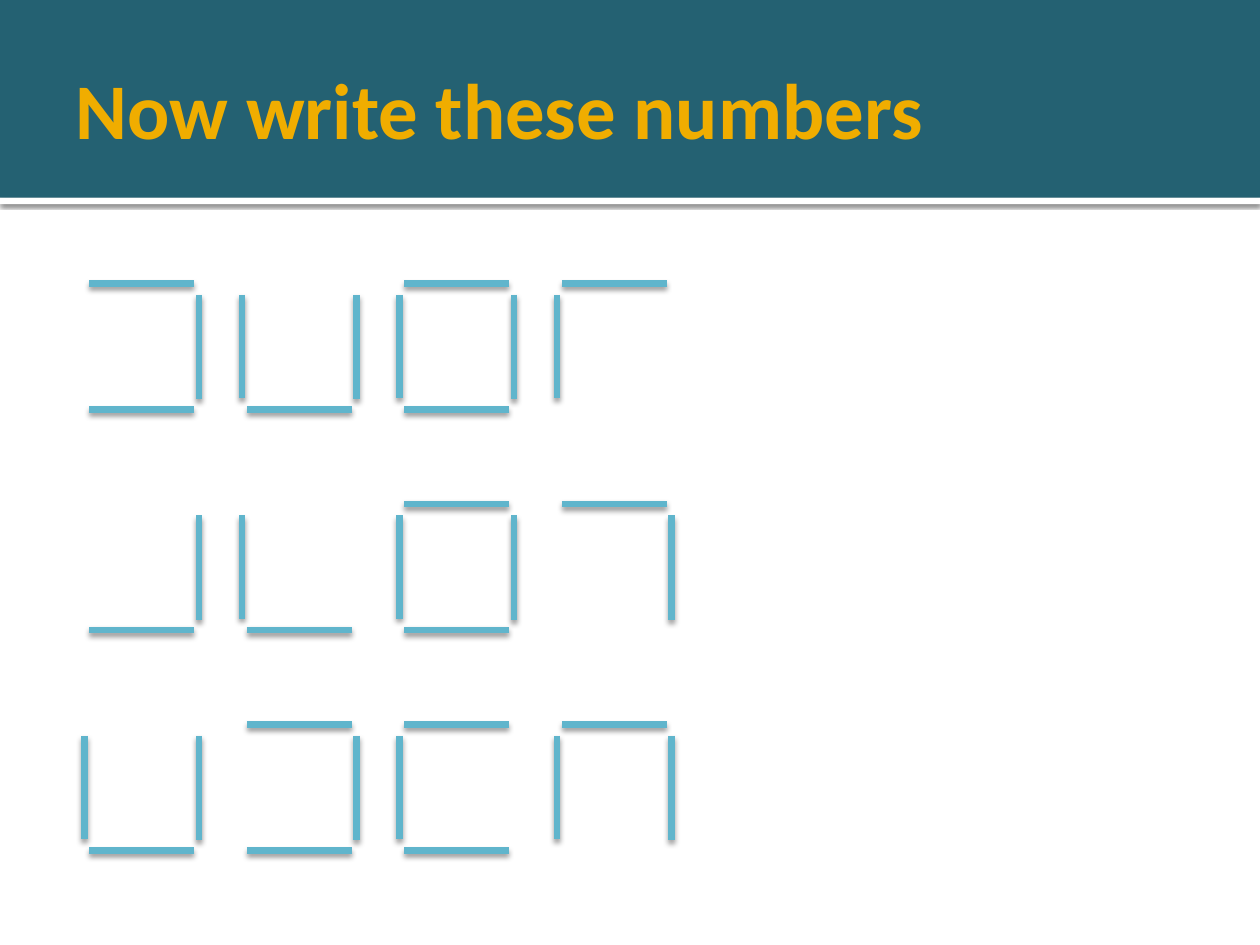
from dataclasses import dataclass

from lxml.etree import SubElement
from pptx import Presentation
from pptx.dml.color import RGBColor
from pptx.enum.shapes import MSO_CONNECTOR, MSO_SHAPE
from pptx.enum.text import MSO_ANCHOR, PP_ALIGN
from pptx.oxml.ns import qn
from pptx.util import Inches, Pt

TEAL = RGBColor(0x24, 0x61, 0x72)
WHITE = RGBColor(0xFF, 0xFF, 0xFF)
AMBER = RGBColor(0xF0, 0xAD, 0x00)
SKY = RGBColor(0x60, 0xB5, 0xCC)


@dataclass(frozen=True)
class Shadow:
    opacity: int  # percent
    blur: float  # points
    distance: float  # points


@dataclass(frozen=True)
class Stroke:
    x1: float
    y1: float
    x2: float
    y2: float


BAND_SHADOW = Shadow(60, 2.5, 0.8)
STROKE_SHADOW = Shadow(38, 3.1, 2)

# Strokes of one digit, measured from the corner of its cell
STROKES = {
    "top": Stroke(0.04, 0, 0.87, 0),
    "bottom": Stroke(0.04, 1, 0.87, 1),
    "left": Stroke(0, 0.09, 0, 0.91),
    "right": Stroke(0.91, 0.09, 0.91, 0.92),
}

# Each digit is a box with some sides left out, as in a 3 x 3 grid
DIGITS = {
    1: "bottom right",
    2: "left bottom right",
    3: "left bottom",
    4: "top bottom right",
    5: "top bottom left right",
    6: "top bottom left",
    7: "top right",
    8: "top left right",
    9: "top left",
}
NUMBERS = [(4, 2, 5, 9), (1, 3, 5, 7), (2, 4, 6, 8)]

GRID_LEFT, GRID_TOP = 0.67, 2.25
COLUMN_STEP, ROW_STEP = 1.25, 1.75


def add_shadow(shape, shadow: Shadow) -> None:
    """Give a shape a black shadow straight below it."""
    effects = SubElement(shape._element.spPr, qn("a:effectLst"))
    outer = SubElement(
        effects, qn("a:outerShdw"),
        blurRad=str(Pt(shadow.blur)), dist=str(Pt(shadow.distance)),
        dir="5400000", algn="ctr", rotWithShape="0",
    )
    color = SubElement(outer, qn("a:srgbClr"), val="000000")
    SubElement(color, qn("a:alpha"), val=str(shadow.opacity * 1000))


def add_band(page, top: float, height: float, color: RGBColor):
    """Draw a borderless bar across the page."""
    band = page.shapes.add_shape(
        MSO_SHAPE.RECTANGLE, 0, Inches(top), Inches(10), Inches(height)
    )
    band.fill.solid()
    band.fill.fore_color.rgb = color
    band.line.fill.background()
    return band


def add_digit(page, digit: int, left: float, top: float) -> None:
    """Draw the strokes of one digit."""
    for side in DIGITS[digit].split():
        stroke = STROKES[side]
        line = page.shapes.add_connector(
            MSO_CONNECTOR.STRAIGHT,
            Inches(left + stroke.x1), Inches(top + stroke.y1),
            Inches(left + stroke.x2), Inches(top + stroke.y2),
        )
        line.line.color.rgb = SKY
        line.line.width = Pt(3.82)
        add_shadow(line, STROKE_SHADOW)


def format_title(title) -> None:
    title.left, title.top = Inches(0.5), Inches(0.17)
    title.width, title.height = Inches(9), Inches(1.37)
    frame = title.text_frame
    frame.text = "Now write these numbers"
    frame.word_wrap = True
    frame.vertical_anchor = MSO_ANCHOR.MIDDLE
    frame.margin_left = Inches(0.1)
    frame.margin_right = frame.margin_top = frame.margin_bottom = Inches(0.05)
    para = frame.paragraphs[0]
    para.alignment = PP_ALIGN.LEFT
    font = para.runs[0].font
    font.name, font.size, font.bold = "Calibri", Pt(45), True
    font.color.rgb = AMBER


def main() -> None:
    deck = Presentation()
    deck.slide_width, deck.slide_height = Inches(10), Inches(7.5)
    page = deck.slides.add_slide(deck.slide_layouts[5])

    # Header bands, with the title in front of them
    rule = add_band(page, 1.57, 0.05, WHITE)
    add_shadow(rule, BAND_SHADOW)
    header = add_band(page, 0, 1.57, TEAL)
    header.shadow.inherit = False
    title = page.shapes.title
    format_title(title)
    header._element.addnext(title._element)

    # Numbers, one per row
    for row, number in enumerate(NUMBERS):
        for column, digit in enumerate(number):
            add_digit(page, digit, GRID_LEFT + column * COLUMN_STEP,
                      GRID_TOP + row * ROW_STEP)

    deck.save("out.pptx")


if __name__ == "__main__":
    main()
